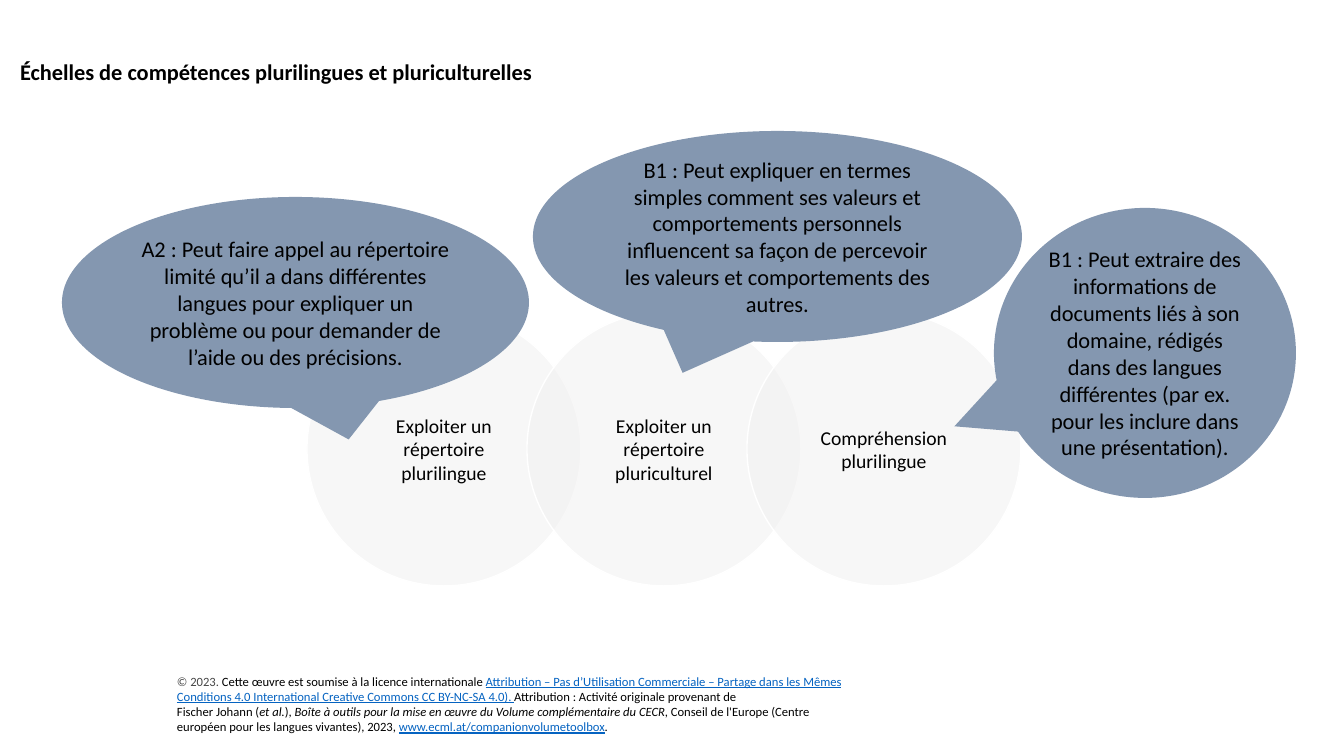
import pptx
import pptx.dml.color
import pptx.enum.shapes
import pptx.enum.text
import pptx.oxml.ns
import pptx.util
from lxml import etree

SCALE = 914400 / 100.8  # EMU in one px
COLORS = {"text": "000000", "copyright": "464646", "link": "0563C1",
          "circle": "F1F0F0", "outline": "FFFFFF", "callout": "8497B0"}
SHAPES = pptx.enum.shapes.MSO_SHAPE
ALIGN = pptx.enum.text.PP_ALIGN
ANCHOR = pptx.enum.text.MSO_ANCHOR


def px(*lengths):
    return [pptx.util.Emu(round(length * SCALE)) for length in lengths]


def write(shape, paragraphs, size, align=ALIGN.LEFT, anchor=ANCHOR.MIDDLE,
          bold=False, side=10, top=5):
    """Fill a shape with paragraphs, each a list of (text, style) runs."""
    frame = shape.text_frame
    frame.word_wrap = True
    frame.auto_size = pptx.enum.text.MSO_AUTO_SIZE.NONE
    frame.vertical_anchor = anchor
    frame.margin_left, frame.margin_right = px(side, side)
    frame.margin_top, frame.margin_bottom = px(top, top)
    for index, runs in enumerate(paragraphs):
        paragraph = frame.add_paragraph() if index else frame.paragraphs[0]
        paragraph.alignment = align
        paragraph.line_spacing = 1.0
        for text, style in runs:
            run = paragraph.add_run()
            run.text = text
            font = run.font
            font.name = "Calibri"
            font.size = pptx.util.Pt(size)
            font.bold = bold
            font.italic = style == "italic"
            font.underline = style == "link"
            color = COLORS.get(style, COLORS["text"])
            font.color.rgb = pptx.dml.color.RGBColor.from_string(color)


presentation = pptx.Presentation()
presentation.slide_width, presentation.slide_height = px(1344, 756)
slide = presentation.slides.add_slide(presentation.slide_layouts[5])

# Title
title = slide.shapes.title
title.left, title.top, title.width, title.height = px(10, 53, 1231, 37)
write(title, [[("Échelles de compétences plurilingues et pluriculturelles", "text")]],
      16, anchor=ANCHOR.TOP, bold=True)

# Licence and source
licence = slide.shapes.add_textbox(*px(167, 668, 690, 72))
write(licence, [
    [("© 2023. ", "copyright"),
     ("Cette œuvre est soumise à la licence internationale ", "text"),
     ("Attribution – Pas d’Utilisation Commerciale – Partage dans les Mêmes "
      "Conditions 4.0 International Creative Commons CC BY-NC-SA 4.0). ", "link"),
     ("Attribution : Activité originale provenant de", "text")],
    [("Fischer Johann (", "text"), ("et al.", "italic"), ("), ", "text"),
     ("Boîte à outils pour la mise en œuvre du Volume complémentaire du CECR", "italic"),
     (", Conseil de l'Europe (Centre européen pour les langues vivantes), 2023, ", "text"),
     ("www.ecml.at/companionvolumetoolbox", "link"), (".", "text")],
], 9)

# Overlapping circles, one for each scale
scales = ["Exploiter un répertoire plurilingue",
          "Exploiter un répertoire pluriculturel",
          "Compréhension plurilingue"]
for index, scale in enumerate(scales):
    circle = slide.shapes.add_shape(SHAPES.OVAL, *px(307 + 220 * index, 312, 274, 274))
    circle.shadow.inherit = False
    circle.fill.solid()
    circle.fill.fore_color.rgb = pptx.dml.color.RGBColor.from_string(COLORS["circle"])
    fill_color = circle.fill._xPr.find(".//" + pptx.oxml.ns.qn("a:srgbClr"))
    etree.SubElement(fill_color, pptx.oxml.ns.qn("a:alpha"), val="50000")
    circle.line.color.rgb = pptx.dml.color.RGBColor.from_string(COLORS["outline"])
    circle.line.width = pptx.util.Pt(1)
    write(circle, [[(scale, "text")]], 14, align=ALIGN.CENTER, side=15, top=2)

# Callouts with descriptors: place, pointer tip, text
callouts = [
    ((533, 131, 489, 211), (-0.194, 0.646),
     "B1 : Peut expliquer en termes simples comment ses valeurs et comportements "
     "personnels influencent sa façon de percevoir les valeurs et comportements des autres."),
    ((62, 197, 467, 211), (0.114, 0.649),
     "A2 : Peut faire appel au répertoire limité qu’il a dans différentes langues pour "
     "expliquer un problème ou pour demander de l’aide ou des précisions."),
    ((994, 208, 302, 290), (-0.631, 0.253),
     "B1 : Peut extraire des informations de documents liés à son domaine, rédigés dans "
     "des langues différentes (par ex. pour les inclure dans une présentation)."),
]
for place, tip, descriptor in callouts:
    callout = slide.shapes.add_shape(SHAPES.OVAL_CALLOUT, *px(*place))
    callout.adjustments[0], callout.adjustments[1] = tip
    callout.shadow.inherit = False
    callout.fill.solid()
    callout.fill.fore_color.rgb = pptx.dml.color.RGBColor.from_string(COLORS["callout"])
    callout.line.fill.background()
    write(callout, [[(descriptor, "text")]], 16, align=ALIGN.CENTER)

presentation.save("out.pptx")
